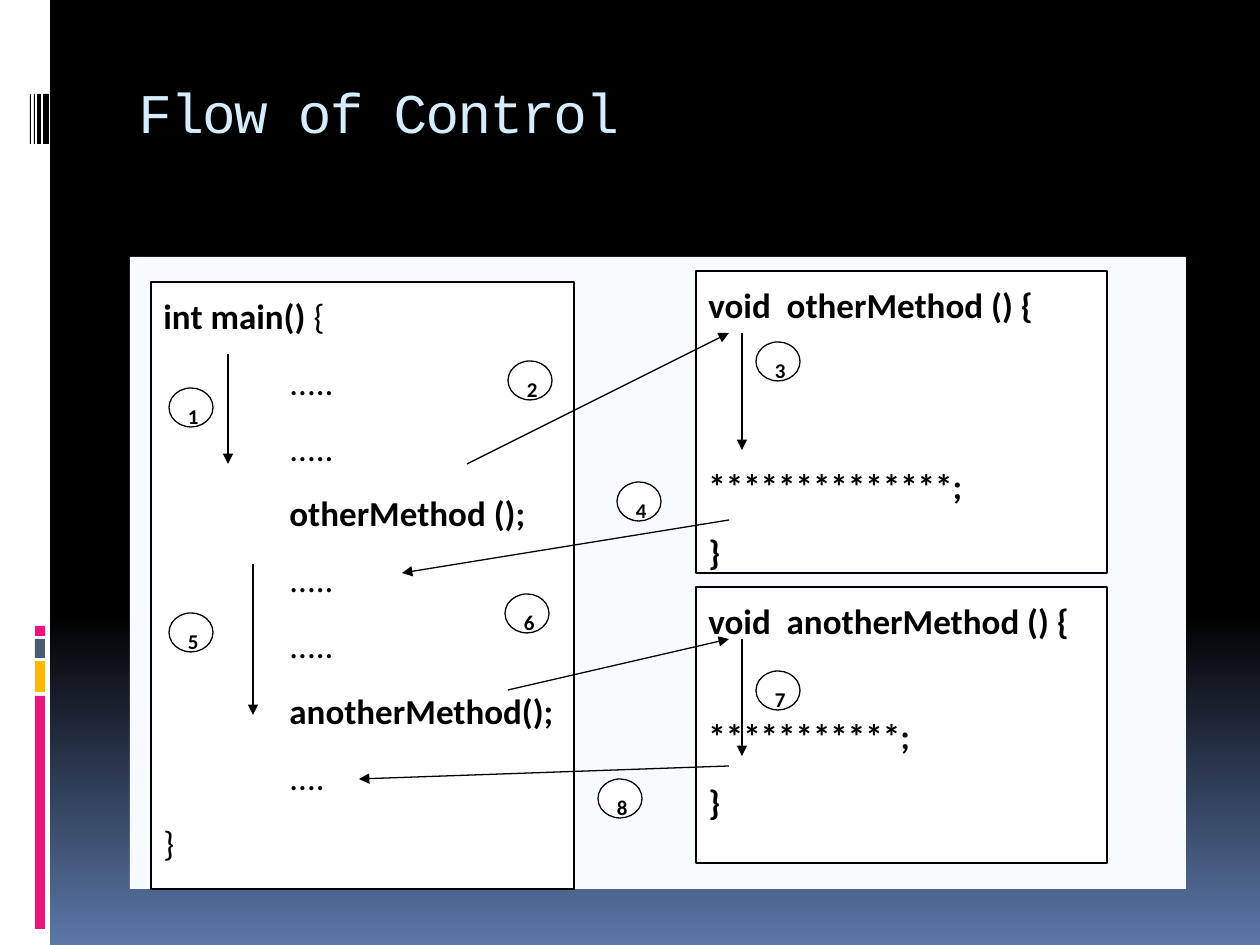
from pptx import Presentation
from pptx.dml.color import RGBColor
from pptx.enum.shapes import MSO_CONNECTOR, MSO_SHAPE
from pptx.enum.text import MSO_ANCHOR, PP_ALIGN
from pptx.oxml.ns import qn
from pptx.util import Pt
from lxml import etree

SCALE = 914400 / 126
HUES = {"black": "000000", "white": "FFFFFF", "dusk": "5B77A8", "pale": "F7FBFF",
        "title": "D6ECFF", "pink": "EA157A", "gold": "FEB80A", "slate": "4E5B6F"}
HUES = {name: RGBColor.from_string(code) for name, code in HUES.items()}


def add_box(kind, place, hue, line=False):
    box = slide.shapes.add_shape(kind, *[round(n * SCALE) for n in place])
    box.shadow.inherit = False
    box.fill.solid()
    box.fill.fore_color.rgb = HUES[hue]
    if line:
        box.line.color.rgb = HUES["black"]
        box.line.width = Pt(0.75)
    else:
        box.line.fill.background()
    return box


def add_run(para, text, size, bold, hue="black", face="Calibri"):
    run = para.add_run()
    run.text = text
    for key, value in {"size": Pt(size), "bold": bold, "name": face}.items():
        setattr(run.font, key, value)
    run.font.color.rgb = HUES[hue]
    return run


deck = Presentation()
deck.slide_width, deck.slide_height = round(1260 * SCALE), round(945 * SCALE)
slide = deck.slides.add_slide(deck.slide_layouts[6])

# Background
back = slide.background.fill
back.gradient()
back.gradient_angle = 270
for stop, spot, hue in zip(back.gradient_stops, (0.65, 1), ("black", "dusk")):
    stop.position = spot
    stop.color.rgb = HUES[hue]

# Side strip with its colour bars and stripes
add_box(MSO_SHAPE.RECTANGLE, (0, 0, 50, 945), "white")
for top, high, hue in [(696, 233, "pink"), (661, 31, "gold"),
                       (639, 19, "slate"), (626, 10, "pink")]:
    add_box(MSO_SHAPE.RECTANGLE, (35, top, 10, high), hue)
for left, wide in [(43, 6), (37, 4), (34, 1), (30, 1)]:
    add_box(MSO_SHAPE.RECTANGLE, (left, 94, wide, 50), "black")

# Title
title = slide.shapes.add_textbox(*[round(n * SCALE) for n in (126, 71, 1071, 126)])
title.text_frame.word_wrap = True
run = add_run(title.text_frame.paragraphs[0], "Flow of Control", 32, False,
              "title", "Courier New")
run.font._element.set("spc", "-100")

# Panel and code boxes: each line is (indent px, space before pt, runs)
add_box(MSO_SHAPE.RECTANGLE, (130, 257, 1056, 632), "pale")
dots = (126, 0, [(".....", False)])
codes = [
    ((151, 282, 423, 607), [
        (0, 0, [("int main()", True), (" {", False)]),
        dots, dots,
        (126, 0, [("otherMethod ();", True)]),
        dots, dots,
        (126, 0, [("anotherMethod();", True)]),
        (126, 0, [("....", False)]),
        (0, 0, [("}", False)])]),
    ((696, 271, 411, 302), [
        (0, 0, [("void  otherMethod () {", True)]),
        (0, 66, [("**************;", True)]),
        (0, 0, [("}", True)])]),
    ((696, 587, 411, 276), [
        (0, 0, [("void  anotherMethod () {", True)]),
        (0, 28, [("***********;", True)]),
        (0, 0, [("}", True)])]),
]
for place, lines in codes:
    frame = add_box(MSO_SHAPE.RECTANGLE, place, "white", True).text_frame
    frame.word_wrap = True
    frame.vertical_anchor = MSO_ANCHOR.TOP
    for i, (indent, before, runs) in enumerate(lines):
        para = frame.add_paragraph() if i else frame.paragraphs[0]
        look = {"alignment": PP_ALIGN.LEFT, "line_spacing": 1.15,
                "space_before": Pt(before), "space_after": Pt(10)}
        for key, value in look.items():
            setattr(para, key, value)
        para._p.get_or_add_pPr().set("marL", str(round(indent * SCALE)))
        for text, bold in runs:
            add_run(para, text, 20, bold)

# Flow arrows: from x, y to x, y
for ends in [(228, 354, 228, 464), (253, 564, 253, 715), (467, 464, 729, 333),
             (742, 333, 742, 450), (742, 639, 742, 756), (508, 690, 729, 639),
             (729, 520, 402, 573), (729, 766, 359, 779)]:
    arrow = slide.shapes.add_connector(MSO_CONNECTOR.STRAIGHT,
                                       *[round(n * SCALE) for n in ends])
    arrow.line.color.rgb = HUES["black"]
    arrow.line.width = Pt(0.75)
    etree.SubElement(arrow.line._get_or_add_ln(), qn("a:tailEnd"), type="triangle")
    etree.SubElement(arrow._element.spPr, qn("a:effectLst"))

# Step numbers
spots = [(169, 388), (508, 361), (756, 342), (617, 482),
         (169, 613), (505, 594), (756, 671), (598, 779)]
for step, (left, top) in enumerate(spots, 1):
    frame = add_box(MSO_SHAPE.OVAL, (left, top, 44, 39), "white", True).text_frame
    frame.word_wrap = True
    frame.vertical_anchor = MSO_ANCHOR.TOP
    para = frame.paragraphs[0]
    look = {"alignment": PP_ALIGN.CENTER, "line_spacing": 1.15, "space_after": Pt(10)}
    for key, value in look.items():
        setattr(para, key, value)
    add_run(para, str(step), 12, True)

deck.save("out.pptx")
